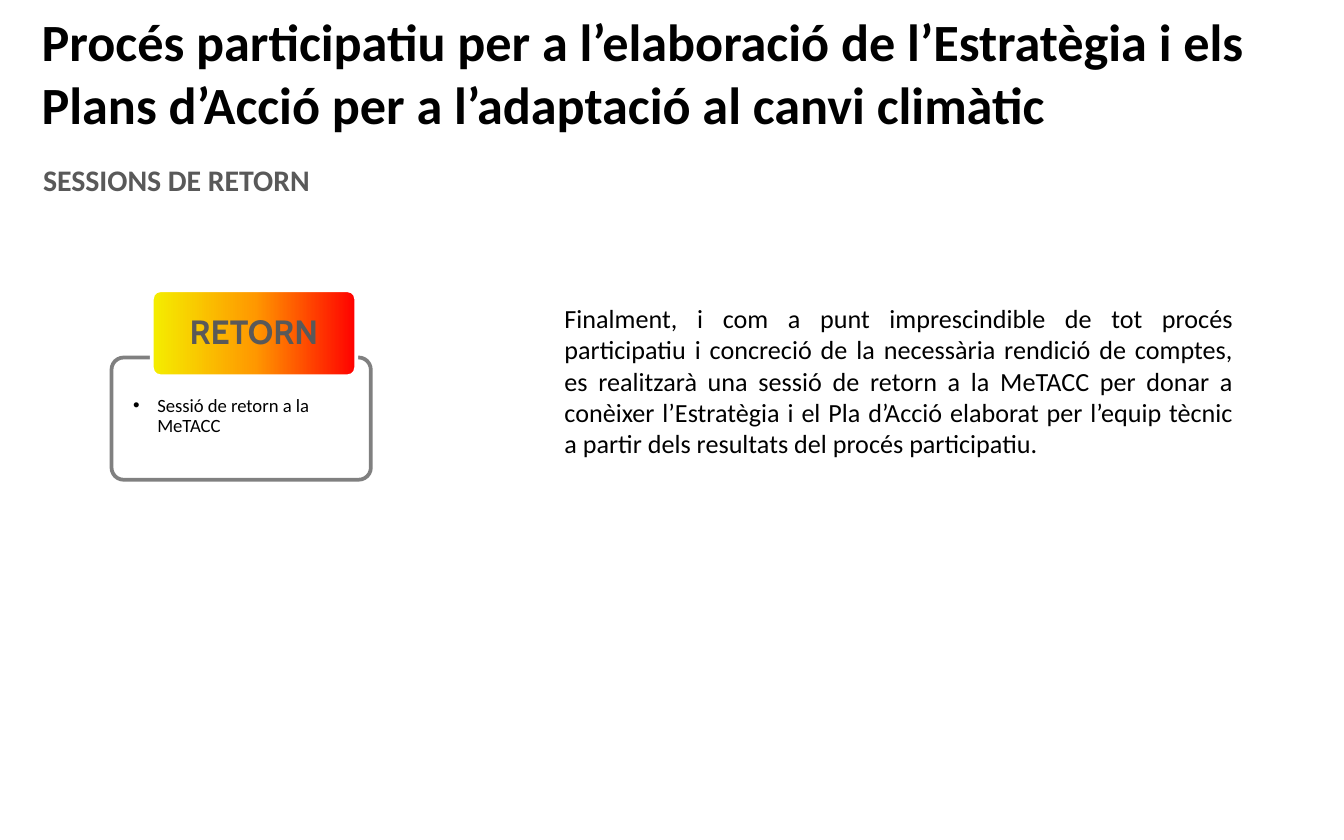
from copy import deepcopy
from dataclasses import dataclass

from lxml import etree
from pptx import Presentation
from pptx import util as u
from pptx.dml.color import RGBColor
from pptx.enum import shapes, text
from pptx.oxml.ns import qn

EMU_PER_PX = 9144
COLORS = {
    "black": "000000",
    "white": "FFFFFF",
    "heading": "595959",
    "border": "808080",
    "yellow": "F4EE00",
    "orange": "FF9900",
    "red": "FF0000",
}


@dataclass(frozen=True)
class Box:
    left: int
    top: int
    width: int
    height: int


@dataclass(frozen=True)
class Card:
    box: Box
    fills: tuple[str, ...]
    line: str
    opacity: int = 100


CARDS = (
    Card(Box(83, 266, 193, 91), ("white",), "border", 90),
    Card(Box(113, 216, 152, 64), ("yellow", "orange", "red"), "white"),
)


def px(value: int) -> u.Emu:
    return u.Emu(value * EMU_PER_PX)


def rgb(name: str) -> RGBColor:
    return RGBColor.from_string(COLORS[name])


def place(shape, box: Box) -> None:
    shape.left, shape.top = px(box.left), px(box.top)
    shape.width, shape.height = px(box.width), px(box.height)


def write_text(shape, content: str, *, size: int, color: str = "black",
               font: str = "Calibri", bold: bool = False,
               align=text.PP_ALIGN.LEFT, anchor=text.MSO_ANCHOR.TOP,
               insets: tuple[int, int, int, int] = (9, 4, 9, 4),
               line_spacing: float = 1.0, space_after: float = 0,
               bullet_indent: int = 0) -> None:
    frame = shape.text_frame
    frame.word_wrap = True
    frame.auto_size = text.MSO_AUTO_SIZE.NONE
    frame.vertical_anchor = anchor
    frame.margin_left, frame.margin_top, frame.margin_right, frame.margin_bottom = map(px, insets)
    paragraph = frame.paragraphs[0]
    paragraph.alignment = align
    paragraph.line_spacing = line_spacing
    paragraph.space_after = u.Pt(space_after)
    if bullet_indent:
        properties = paragraph._p.get_or_add_pPr()
        properties.set("marL", str(px(bullet_indent)))
        properties.set("indent", str(-px(bullet_indent)))
        etree.SubElement(properties, qn("a:buFont")).set("typeface", "Arial")
        etree.SubElement(properties, qn("a:buChar")).set("char", "•")
    run = paragraph.add_run()
    run.text = content
    run.font.name = font
    run.font.size = u.Pt(size)
    run.font.bold = bold
    run.font.color.rgb = rgb(color)


def add_text(slide, box: Box, content: str, **text_format) -> None:
    shape = slide.shapes.add_textbox(0, 0, 0, 0)
    write_text(shape, content, **text_format)
    place(shape, box)


def fill_gradient(shape, names: tuple[str, ...]) -> None:
    shape.fill.gradient()
    shape.fill.gradient_angle = 0
    stop_list = shape._element.spPr.find(f".//{qn('a:gsLst')}")
    while len(stop_list) < len(names):
        stop_list.append(deepcopy(stop_list[0]))
    for index, (stop, name) in enumerate(zip(shape.fill.gradient_stops, names)):
        stop.position = index / (len(names) - 1)
        stop.color.rgb = rgb(name)


def add_card(slide, card: Card) -> None:
    shape = slide.shapes.add_shape(shapes.MSO_SHAPE.ROUNDED_RECTANGLE, 0, 0, 0, 0)
    place(shape, card.box)
    shape.adjustments[0] = 0.1
    shape.shadow.inherit = False
    if len(card.fills) > 1:
        fill_gradient(shape, card.fills)
    else:
        shape.fill.solid()
        shape.fill.fore_color.rgb = rgb(card.fills[0])
        color = shape._element.spPr.find(f"{qn('a:solidFill')}/{qn('a:srgbClr')}")
        etree.SubElement(color, qn("a:alpha")).set("val", str(card.opacity * 1000))
    shape.line.color.rgb = rgb(card.line)
    shape.line.width = u.Pt(2)


def main() -> None:
    presentation = Presentation()
    presentation.slide_width, presentation.slide_height = px(1000), px(625)
    slide = presentation.slides.add_slide(presentation.slide_layouts[5])

    title = slide.shapes.title
    place(title, Box(22, 2, 978, 103))
    write_text(
        title,
        "Procés participatiu per a l’elaboració de l’Estratègia i els "
        "Plans d’Acció per a l’adaptació al canvi climàtic",
        size=28, bold=True, anchor=text.MSO_ANCHOR.MIDDLE,
    )
    add_text(slide, Box(23, 116, 705, 36), "SESSIONS DE RETORN", size=16,
             color="heading", bold=True, anchor=text.MSO_ANCHOR.MIDDLE)

    for card in CARDS:
        add_card(slide, card)
    add_text(slide, Box(85, 287, 188, 67), "Sessió de retorn a la MeTACC", size=10,
             insets=(14, 8, 14, 12), line_spacing=0.9, bullet_indent=18)
    add_text(slide, Box(115, 218, 148, 60), "RETORN", size=18, color="heading",
             font="Cabin", bold=True, align=text.PP_ALIGN.CENTER,
             anchor=text.MSO_ANCHOR.MIDDLE, insets=(4, 3, 4, 3), line_spacing=0.9)
    add_text(
        slide, Box(411, 221, 516, 127),
        "Finalment, i com a punt imprescindible de tot procés participatiu i "
        "concreció de la necessària rendició de comptes, es realitzarà una sessió "
        "de retorn a la MeTACC per donar a conèixer l’Estratègia i el Pla d’Acció "
        "elaborat per l’equip tècnic a partir dels resultats del procés participatiu.",
        size=14, align=text.PP_ALIGN.JUSTIFY, space_after=5.3,
    )
    presentation.save("out.pptx")


if __name__ == "__main__":
    main()
